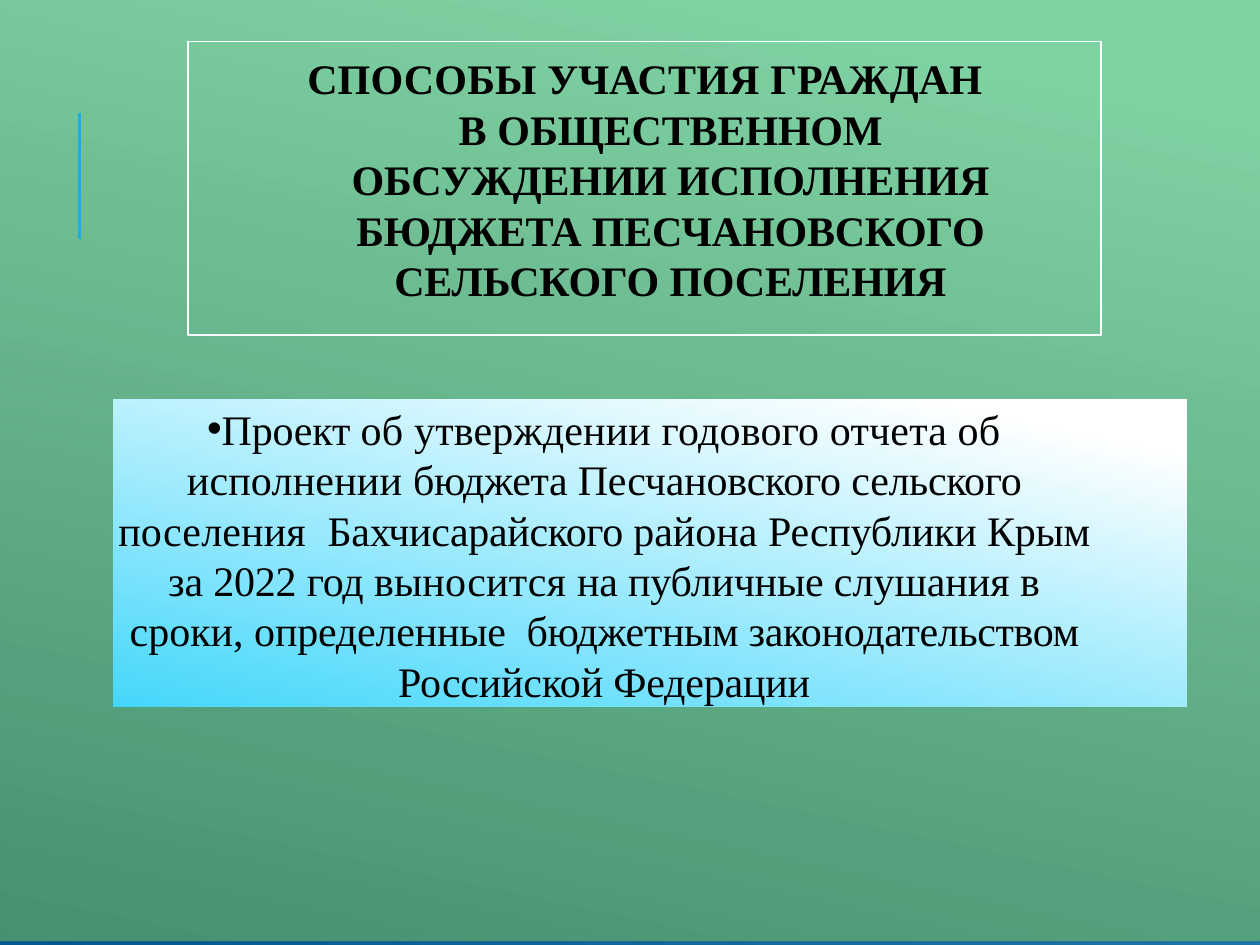
from pptx import Presentation
from pptx.dml.color import RGBColor
from pptx.enum.shapes import MSO_CONNECTOR, MSO_SHAPE
from pptx.enum.text import MSO_ANCHOR, MSO_AUTO_SIZE, PP_ALIGN
from pptx.oxml.ns import qn
from pptx.util import Inches, Pt
from lxml.etree import SubElement

FONT = "Times New Roman"
COLORS = {"text": "000000", "white": "FFFFFF", "accent": "1CADE3", "veil": "92D04F",
          "bg_top": "6ED2EB", "bg_bottom": "06588E", "panel": "45D7FB"}
TITLE = [("СПОСОБЫ УЧАСТИЯ ГРАЖДАН В О", 0.1),
         ("БЩЕСТВЕННОМ ОБСУЖДЕНИИ ИСПОЛНЕНИЯ БЮДЖЕТА ПЕСЧАНОВСКОГО "
          "СЕЛЬСКОГО ПОСЕЛЕНИЯ", -0.1)]
BODY = [("Проект ", -0.1), ("об утверждении годового отчета об исполнении ", 0.1),
        ("бюджета ", -0.2), ("Песчановского ", -0.1), ("сельского ", -0.2),
        ("поселения  ", 0.1), ("Бахчисарайского ", -0.2), ("района ", 0),
        ("Республики Крым за 2022 год ", -0.1), ("выносится ", 0.1),
        ("на публичные ", -0.1), ("слушания в сроки, ", 0), ("определенные  ", -0.1),
        ("бюджетным законодательством ", -0.2), ("Российской Федерации", -0.1)]


def rgb(name):
    return RGBColor.from_string(COLORS[name])


def box(*lengths):
    return [Inches(v) for v in lengths]


def set_gradient(fill, *names):
    fill.gradient()
    fill.gradient_angle = 258
    for stop, name, position in zip(fill.gradient_stops, names, (0.1, 1)):
        stop.color.rgb = rgb(name)
        stop.position = position


def add_rect(s, *lengths):
    sp = s.shapes.add_shape(MSO_SHAPE.RECTANGLE, *box(*lengths))
    sp.shadow.inherit = False
    return sp


def fill_text(sp, place, runs, margins, indents, bold):
    sp.left, sp.top, sp.width, sp.height = box(*place)
    tf = sp.text_frame
    tf.word_wrap, tf.auto_size = True, MSO_AUTO_SIZE.NONE
    tf.vertical_anchor = MSO_ANCHOR.TOP
    tf.margin_left, tf.margin_top, tf.margin_right, tf.margin_bottom = box(*margins)
    p = tf.paragraphs[0]
    p.alignment, p.line_spacing, p.space_before = PP_ALIGN.CENTER, Pt(28.8), Pt(0)
    pPr = p._p.get_or_add_pPr()
    for key, value in zip(("marL", "indent"), indents):
        pPr.set(key, str(Inches(value)))
    for text, spacing in runs:
        r = p.add_run()
        r.text = text
        r.font.name, r.font.size, r.font.bold = FONT, Pt(24), bold
        r.font.color.rgb = rgb("text")
        r._r.get_or_add_rPr().set("spc", str(round(spacing * 100)))
    return pPr


def main():
    """Build the slide on public discussion of the budget."""
    prs = Presentation()
    prs.slide_width, prs.slide_height = box(10, 7.5)
    s = prs.slides.add_slide(prs.slide_layouts[1])
    set_gradient(s.background.fill, "bg_top", "bg_bottom")

    veil = add_rect(s, 0, 0, 10, 7.47)
    veil.fill.solid()
    veil.fill.fore_color.rgb = rgb("veil")
    veil.line.fill.background()
    color = veil._element.spPr.find(qn("a:solidFill"))[0]
    SubElement(color, qn("a:alpha"), val="47000")
    s.shapes._spTree.insert(2, veil._element)

    bar = s.shapes.add_connector(MSO_CONNECTOR.STRAIGHT, *box(0.63, 0.9, 0.63, 1.9))
    bar.line.color.rgb, bar.line.width = rgb("accent"), Pt(1.56)
    SubElement(bar._element.spPr, qn("a:effectLst"))

    title, body = s.placeholders
    fill_text(title, (2.34, 0.42, 5.56, 2), TITLE, (0, 0, 0, 0), (0.4, -0.4), True)
    pPr = fill_text(body, (0.9, 3.17, 8.52, 2.44), BODY, (0, 0.03, 0.74, 0), (0.01, 0), False)
    SubElement(pPr, qn("a:buChar"), char="•")
    set_gradient(body.fill, "white", "panel")

    frame = add_rect(s, 1.49, 0.33, 7.25, 2.33)
    frame.fill.background()
    frame.line.color.rgb, frame.line.width = rgb("white"), Pt(1)
    prs.save("out.pptx")


if __name__ == "__main__":
    main()
